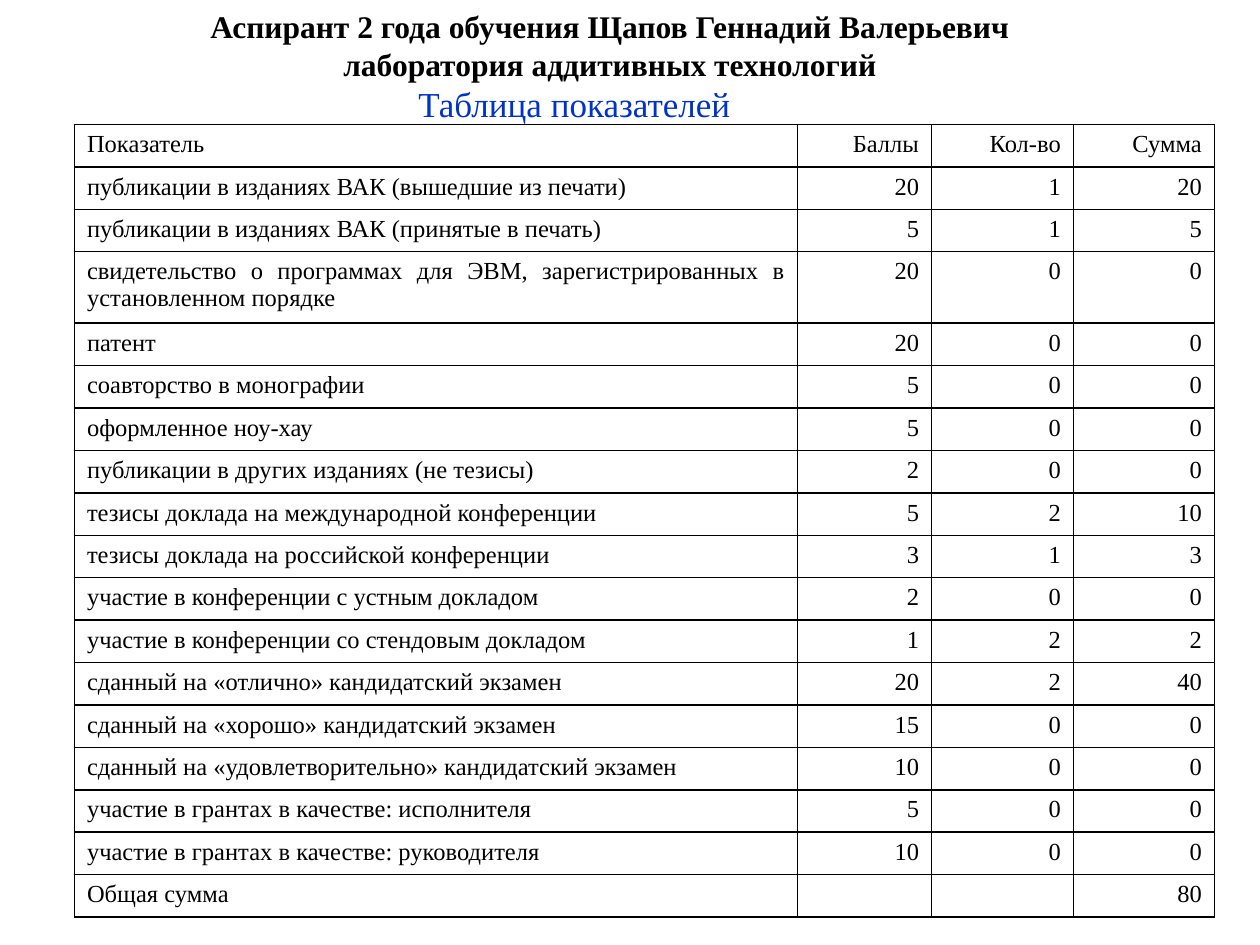
from pptx import Presentation
from pptx.dml.color import RGBColor
from pptx.enum.text import MSO_ANCHOR, MSO_AUTO_SIZE, PP_ALIGN
from pptx.oxml import parse_xml
from pptx.oxml.ns import nsdecls
from pptx.util import Cm, Pt

FONT = "Times New Roman"
BLACK = "000000"
BLUE = "0033CC"

HEADERS = ("Показатель", "Баллы", "Кол-во", "Сумма")
INDICATORS = [
    ("публикации в изданиях ВАК (вышедшие из печати)", 20, 1),
    ("публикации в изданиях ВАК (принятые в печать)", 5, 1),
    ("свидетельство о программах для ЭВМ, зарегистрированных в установленном порядке", 20, 0),
    ("патент", 20, 0),
    ("соавторство в монографии", 5, 0),
    ("оформленное ноу-хау", 5, 0),
    ("публикации в других изданиях (не тезисы)", 2, 0),
    ("тезисы доклада на международной конференции", 5, 2),
    ("тезисы доклада на российской конференции", 3, 1),
    ("участие в конференции с устным докладом", 2, 0),
    ("участие в конференции со стендовым докладом", 1, 2),
    ("сданный на «отлично» кандидатский экзамен", 20, 2),
    ("сданный на «хорошо» кандидатский экзамен", 15, 0),
    ("сданный на «удовлетворительно» кандидатский экзамен", 10, 0),
    ("участие в грантах в качестве: исполнителя", 5, 0),
    ("участие в грантах в качестве: руководителя", 10, 0),
]
COLUMN_WIDTHS = (14.58, 2.7, 2.86, 2.84)
TABLE_HEIGHT = 15.98
TALL_ROW = 3
TALL_ROW_HEIGHT = 1.43


def color(value):
    return RGBColor.from_string(value)


def format_text(text_frame, size, font_color, alignment, bold=False):
    for paragraph in text_frame.paragraphs:
        paragraph.alignment = alignment
        for item in (paragraph, *paragraph.runs):
            item.font.name = FONT
            item.font.size = Pt(size)
            item.font.bold = bold
            item.font.color.rgb = color(font_color)


def place(shape, left, top, width, height):
    shape.left, shape.top = Cm(left), Cm(top)
    shape.width, shape.height = Cm(width), Cm(height)


def fill_title(slide, text):
    title = slide.shapes.title
    place(title, 1.5, 0, 21.59, 1.8)
    text_frame = title.text_frame
    text_frame.text = text
    text_frame.auto_size = MSO_AUTO_SIZE.NONE
    text_frame.vertical_anchor = MSO_ANCHOR.MIDDLE
    format_text(text_frame, 18, BLACK, PP_ALIGN.CENTER, bold=True)


def add_caption(slide, text):
    caption = slide.shapes.add_textbox(Cm(2.69), Cm(1.54), Cm(17.78), Cm(1.19))
    caption.text_frame.word_wrap = True
    caption.text_frame.text = text
    format_text(caption.text_frame, 20, BLUE, PP_ALIGN.CENTER)


def add_borders(cell, line_color, width):
    properties = cell._tc.get_or_add_tcPr()
    for position, side in enumerate(("lnL", "lnR", "lnT", "lnB")):
        properties.insert(position, parse_xml(
            f'<a:{side} {nsdecls("a")} w="{Pt(width)}"><a:solidFill>'
            f'<a:srgbClr val="{line_color}"/></a:solidFill></a:{side}>'))


def table_rows():
    scored = [(name, points, count, points * count) for name, points, count in INDICATORS]
    total = sum(row[-1] for row in scored)
    return [HEADERS, *scored, ("Общая сумма", "", "", total)]


def add_score_table(slide):
    rows = table_rows()
    table = slide.shapes.add_table(
        len(rows), len(HEADERS), Cm(1.5), Cm(2.51),
        Cm(sum(COLUMN_WIDTHS)), Cm(TABLE_HEIGHT)).table
    table.first_row = False
    table.horz_banding = False
    for column, width in zip(table.columns, COLUMN_WIDTHS):
        column.width = Cm(width)
    row_height = (TABLE_HEIGHT - TALL_ROW_HEIGHT) / (len(rows) - 1)
    for row_index, values in enumerate(rows):
        height = TALL_ROW_HEIGHT if row_index == TALL_ROW else row_height
        table.rows[row_index].height = Cm(height)
        for column_index, value in enumerate(values):
            cell = table.cell(row_index, column_index)
            cell.text_frame.text = str(value)
            cell.fill.background()
            alignment = PP_ALIGN.RIGHT if column_index else PP_ALIGN.JUSTIFY
            format_text(cell.text_frame, 14, BLACK, alignment)
            add_borders(cell, BLACK, 1)


def remove_placeholder(placeholder):
    element = placeholder.element
    element.getparent().remove(element)


def main():
    presentation = Presentation()
    presentation.slide_width = Cm(25.4)
    presentation.slide_height = Cm(19.05)
    slide = presentation.slides.add_slide(presentation.slide_layouts[0])
    remove_placeholder(slide.placeholders[1])
    fill_title(slide, "Аспирант 2 года обучения Щапов Геннадий Валерьевич\v"
                      "лаборатория аддитивных технологий")
    add_caption(slide, "Таблица показателей")
    add_score_table(slide)
    presentation.save("out.pptx")


if __name__ == "__main__":
    main()
